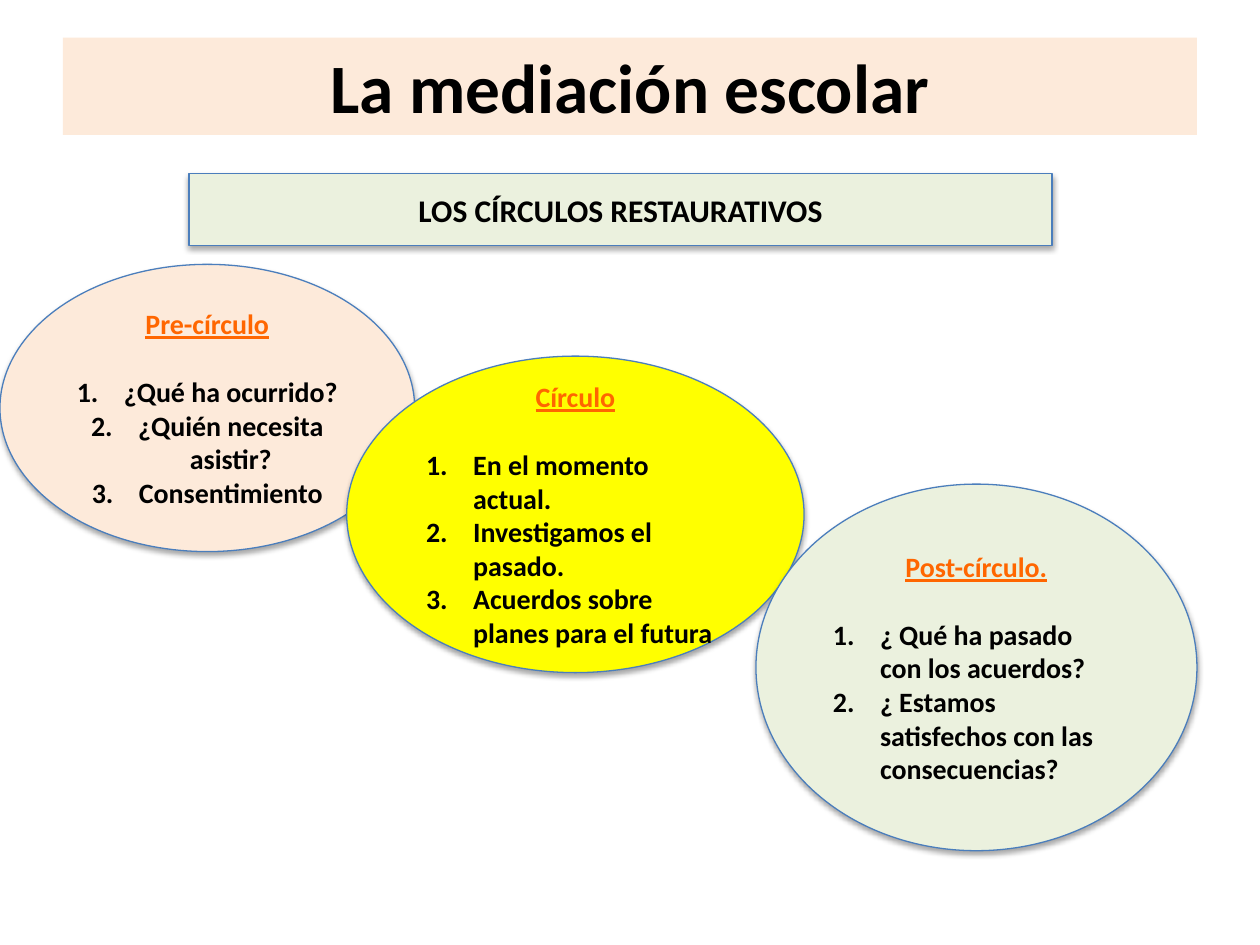
from lxml.etree import SubElement
from pptx import Presentation
from pptx.dml.color import RGBColor
from pptx.enum.shapes import MSO_SHAPE
from pptx.enum.text import MSO_ANCHOR, PP_ALIGN
from pptx.oxml.ns import qn
from pptx.util import Cm, Pt

PEACH = RGBColor(0xFD, 0xEA, 0xDA)
GREEN = RGBColor(0xEB, 0xF1, 0xDE)
YELLOW = RGBColor(0xFF, 0xFF, 0x00)
ORANGE = RGBColor(0xFF, 0x66, 0x00)
BLUE = RGBColor(0x4B, 0x7E, 0xBC)
BLACK = RGBColor(0x00, 0x00, 0x00)
FONT = "Calibri"

# text, box in cm (left, top, width, height), fill, size in points, outlined
BANNERS = [
    ("La mediación escolar", (1.27, 0.76, 22.86, 1.96), PEACH, 39.6, False),
    ("LOS CÍRCULOS RESTAURATIVOS", (3.81, 3.5, 17.4, 1.45), GREEN, 18, True),
]
# heading, box in cm, fill, alignment of the steps, steps
CIRCLES = [
    ("Pre-círculo", (0, 5.33, 8.36, 5.79), PEACH, PP_ALIGN.CENTER,
     ["¿Qué ha ocurrido?", "¿Quién necesita asistir?", "Consentimiento"]),
    ("Círculo", (6.99, 7.18, 9.22, 6.38), YELLOW, PP_ALIGN.LEFT,
     ["En el momento actual.", "Investigamos el pasado.",
      "Acuerdos sobre planes para el futura"]),
    ("Post-círculo.", (15.24, 9.76, 8.89, 7.39), GREEN, PP_ALIGN.LEFT,
     ["¿ Qué ha pasado con los acuerdos?",
      "¿ Estamos satisfechos con las consecuencias?"]),
]
STEP_INDENT = Cm(0.95)
HEADING_GAP = Pt(19.5)


def add_shadow(s):
    effects = s._element.spPr.find(qn("a:effectLst"))
    shadow = SubElement(effects, qn("a:outerShdw"), blurRad=str(Pt(3.1)),
                        dist=str(Pt(1.8)), dir="5400000", rotWithShape="0")
    color = SubElement(shadow, qn("a:srgbClr"), val="000000")
    SubElement(color, qn("a:alpha"), val="35000")


def add_box(slide, kind, box, fill, outlined=True):
    s = slide.shapes.add_shape(kind, *map(Cm, box))
    s.shadow.inherit = False
    s.fill.solid()
    s.fill.fore_color.rgb = fill
    if outlined:
        s.line.color.rgb = BLUE
        s.line.width = Pt(0.75)
        add_shadow(s)
    else:
        s.line.fill.background()
    s.text_frame.word_wrap = True
    s.text_frame.vertical_anchor = MSO_ANCHOR.MIDDLE
    return s.text_frame


def write(p, text, size, color=BLACK, align=PP_ALIGN.CENTER):
    p.text = text
    p.alignment = align
    p.font.name = FONT
    p.font.size = Pt(size)
    p.font.bold = True
    p.font.color.rgb = color


def number(p):
    """Turn the paragraph into an item of a numbered list."""
    pPr = p._p.get_or_add_pPr()
    pPr.set("marL", str(STEP_INDENT))
    pPr.set("indent", str(-STEP_INDENT))
    bullet = pPr.makeelement(qn("a:buAutoNum"), {"type": "arabicPeriod"})
    pPr.find(qn("a:defRPr")).addprevious(bullet)


def main():
    prs = Presentation()
    prs.slide_width, prs.slide_height = Cm(25.4), Cm(19.05)
    slide = prs.slides.add_slide(prs.slide_layouts[6])

    for text, box, fill, size, outlined in BANNERS:
        tf = add_box(slide, MSO_SHAPE.RECTANGLE, box, fill, outlined)
        write(tf.paragraphs[0], text, size)

    for heading, box, fill, align, steps in CIRCLES:
        tf = add_box(slide, MSO_SHAPE.OVAL, box, fill)
        p = tf.paragraphs[0]
        write(p, heading, 16, ORANGE)
        p.font.underline = True
        p.space_after = HEADING_GAP
        for step in steps:
            p = tf.add_paragraph()
            write(p, step, 16, align=align)
            number(p)

    prs.save("out.pptx")


if __name__ == "__main__":
    main()
